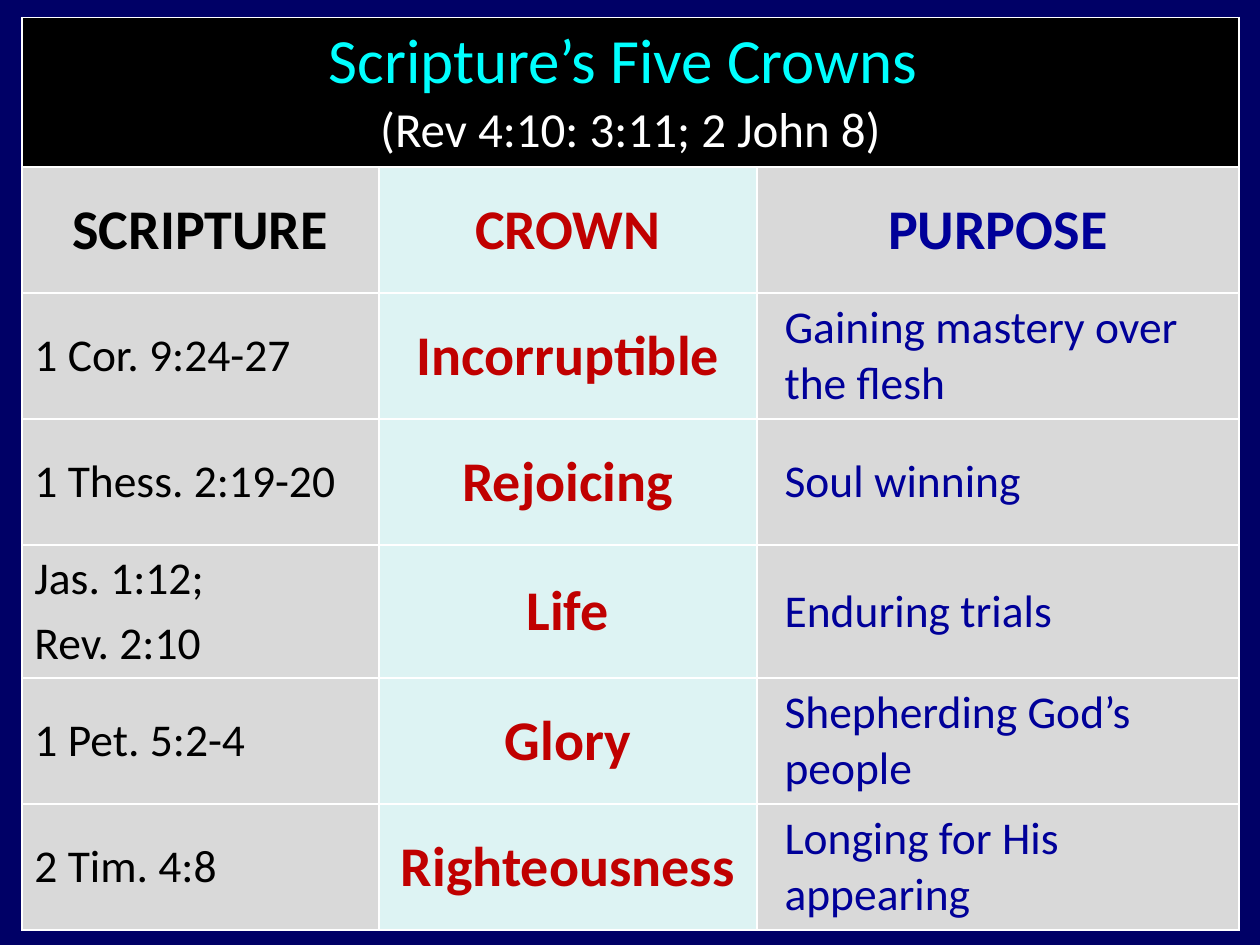
from lxml import etree
from pptx import Presentation
from pptx.dml.color import RGBColor
from pptx.enum import text
from pptx.oxml import ns
from pptx.util import Pt

# Content
TITLE = "Scripture’s Five Crowns "
REFERENCES = "(Rev 4:10: 3:11; 2 John 8)"
HEADINGS = ("SCRIPTURE", "CROWN", "PURPOSE")
CROWNS = [
    ("1 Cor. 9:24-27", "Incorruptible", "Gaining mastery over the flesh"),
    ("1 Thess. 2:19-20", "Rejoicing", "Soul winning"),
    ("Jas. 1:12;\nRev. 2:10", "Life", "Enduring trials"),
    ("1 Pet. 5:2-4", "Glory", "Shepherding God’s people"),
    ("2 Tim. 4:8", "Righteousness", "Longing for His appearing"),
]

# Style
FONT = "Calibri"
COLORS = {
    "page": "000066", "banner": "000000", "title": "00FFFF", "white": "FFFFFF",
    "gray": "D9D9D9", "ice": "DDF3F3",
    "black": "000000", "red": "C00000", "blue": "000099",
}
COLUMN_WIDTHS = (204, 216, 275.5)
COLUMN_FILLS = ("gray", "ice", "gray")
COLUMN_INKS = ("black", "red", "blue")
LEFT, TOP, HEIGHT = 12.5, 10, 520
BANNER_HEIGHT, ROW_HEIGHT = 54, 72
PURPOSE_INDENT = 8.64
CENTER, START = text.PP_ALIGN.CENTER, text.PP_ALIGN.LEFT


def rgb(name):
    return RGBColor.from_string(COLORS[name])


def add_borders(cell):
    properties = cell._tc.get_or_add_tcPr()
    for index, side in enumerate(("lnL", "lnR", "lnT", "lnB")):
        line = etree.Element(ns.qn(f"a:{side}"), w=str(Pt(1)))
        fill = etree.SubElement(line, ns.qn("a:solidFill"))
        etree.SubElement(fill, ns.qn("a:srgbClr"), val=COLORS["white"])
        properties.insert(index, line)


def format_span(span, size, ink, bold):
    span.font.name = FONT
    span.font.size = Pt(size)
    span.font.bold = bold
    span.font.color.rgb = rgb(ink)


def fill_cell(cell, words, fill, styles, align, indent=0):
    """Each style is (size, ink, bold); the last one serves any further runs."""
    cell.fill.solid()
    cell.fill.fore_color.rgb = rgb(fill)
    cell.vertical_anchor = text.MSO_ANCHOR.MIDDLE
    cell.text_frame.text = words
    for para in cell.text_frame.paragraphs:
        para.alignment = align
        properties = para._p.get_or_add_pPr()
        properties.set("marL", str(Pt(indent)))
        properties.set("indent", "0")
        before = etree.SubElement(properties, ns.qn("a:spcBef"))
        etree.SubElement(before, ns.qn("a:spcPct"), val="20000")
        for index, span in enumerate(para.runs):
            format_span(span, *styles[min(index, len(styles) - 1)])


def main():
    deck = Presentation()
    deck.slide_width, deck.slide_height = Pt(720), Pt(540)
    page = deck.slides.add_slide(deck.slide_layouts[6])
    page.background.fill.solid()
    page.background.fill.fore_color.rgb = rgb("page")

    # Table grid
    rows = [HEADINGS] + CROWNS
    table = page.shapes.add_table(
        len(rows) + 1, len(HEADINGS),
        Pt(LEFT), Pt(TOP), Pt(sum(COLUMN_WIDTHS)), Pt(HEIGHT)).table
    table.first_row = table.horz_banding = False
    for column, width in zip(table.columns, COLUMN_WIDTHS):
        column.width = Pt(width)
    for index, row in enumerate(table.rows):
        row.height = Pt(ROW_HEIGHT if index else BANNER_HEIGHT)
    for cell in table.iter_cells():
        add_borders(cell)

    # Banner across all columns
    banner = table.cell(0, 0)
    banner.merge(table.cell(0, len(HEADINGS) - 1))
    fill_cell(banner, f"{TITLE}\v{REFERENCES}", "banner",
              [(36, "title", False), (28, "white", False)], CENTER)

    # Headings and crowns
    for r, row in enumerate(rows, start=1):
        for c, words in enumerate(row):
            strong = r == 1 or c == 1
            indent = PURPOSE_INDENT if c == 2 and not strong else 0
            style = (32 if strong else 26, COLUMN_INKS[c], strong)
            fill_cell(table.cell(r, c), words, COLUMN_FILLS[c], [style],
                      CENTER if strong else START, indent)

    deck.save("out.pptx")


if __name__ == "__main__":
    main()
